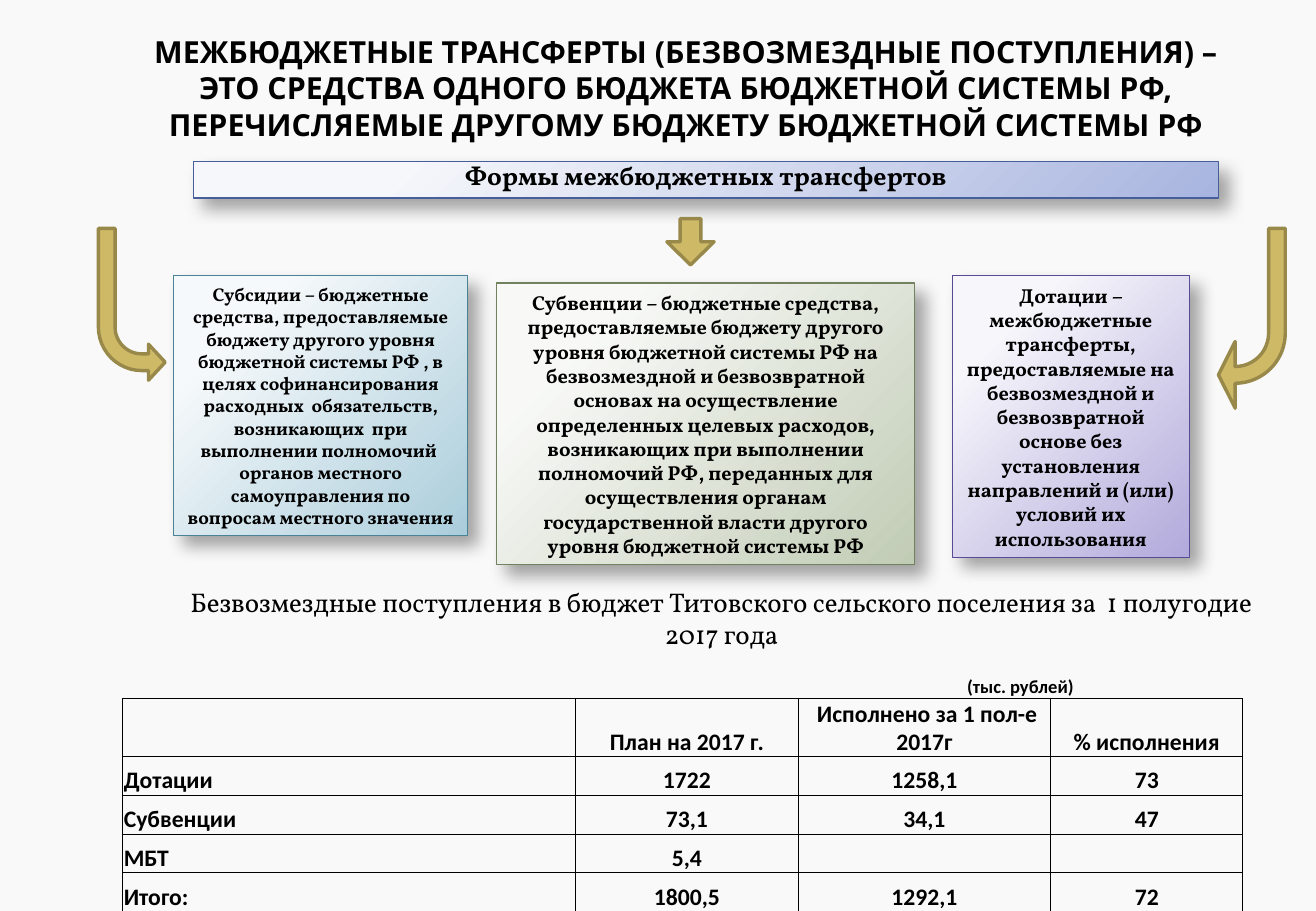
"""Build the slide on inter-budget transfers and their half-year execution."""
from pptx import Presentation
from pptx.dml.color import RGBColor
from pptx.enum.shapes import MSO_SHAPE
from pptx.enum.text import MSO_ANCHOR, MSO_AUTO_SIZE, PP_ALIGN
from pptx.oxml import parse_xml
from pptx.oxml.ns import nsdecls
from pptx.util import Pt


def color(hex_value):
    return RGBColor.from_string(hex_value)


def write_text(frame, text, size, font="Vollkorn", bold=True, align=PP_ALIGN.CENTER, anchor=MSO_ANCHOR.MIDDLE):
    frame.word_wrap = True
    frame.vertical_anchor = anchor
    paragraph = frame.paragraphs[0]
    paragraph.alignment = align
    run = paragraph.add_run()
    run.text = text
    run.font.size = Pt(size)
    run.font.name = font
    run.font.bold = bold
    run.font.color.rgb = color("000000")


presentation = Presentation()
presentation.slide_width = Pt(780)
presentation.slide_height = Pt(540)
slide = presentation.slides.add_slide(presentation.slide_layouts[0])
slide.background.fill.solid()
slide.background.fill.fore_color.rgb = color("F9F9F9")

title = slide.shapes.title
title.left, title.top, title.width, title.height = Pt(75), Pt(9.4), Pt(663), Pt(75)
title_frame = title.text_frame
title_frame.auto_size = MSO_AUTO_SIZE.NONE
title_frame.margin_left = title_frame.margin_right = Pt(3.6)
title_frame.margin_top = title_frame.margin_bottom = Pt(0)
write_text(
    title_frame,
    "МЕЖБЮДЖЕТНЫЕ ТРАНСФЕРТЫ (БЕЗВОЗМЕЗДНЫЕ ПОСТУПЛЕНИЯ) – ЭТО СРЕДСТВА ОДНОГО БЮДЖЕТА "
    "БЮДЖЕТНОЙ СИСТЕМЫ РФ, ПЕРЕЧИСЛЯЕМЫЕ ДРУГОМУ БЮДЖЕТУ БЮДЖЕТНОЙ СИСТЕМЫ РФ",
    18, font="Noto Sans", anchor=MSO_ANCHOR.BOTTOM,
)

arrows = [
    (MSO_SHAPE.DOWN_ARROW, (395.3, 129.6, 28, 27.4), (0.44, 0.5), {}),
    (MSO_SHAPE.BENT_ARROW, (58.3, 135.4, 39.6, 90), (0.25, 0.27, 0.25, 0.65), {"flipV": "1"}),
    (MSO_SHAPE.BENT_ARROW, (722.2, 135.4, 39.6, 106.6), (0.25, 0.5, 0.25, 0.75), {"flipH": "1", "flipV": "1"}),
]
for kind, bounds, adjustments, flips in arrows:
    arrow = slide.shapes.add_shape(kind, *map(Pt, bounds))
    for index, value in enumerate(adjustments):
        arrow.adjustments[index] = value
    for name, value in flips.items():
        arrow.element.spPr.xfrm.set(name, value)
    arrow.shadow.inherit = False
    arrow.fill.solid()
    arrow.fill.fore_color.rgb = color("CEB966")
    arrow.line.color.rgb = color("98894B")
    arrow.line.width = Pt(2)

panels = [
    ((114.5, 95.8, 607.7, 21.6), ("F6F7FB", "A8B5DF", "465F9A"), 15.3, MSO_ANCHOR.TOP,
     "Формы межбюджетных трансфертов"),
    ((103, 163.4, 174.2, 154), ("F6F9FB", "AACDDB", "4A8296"), 11, MSO_ANCHOR.MIDDLE,
     "Субсидии – бюджетные средства, предоставляемые бюджету другого уровня бюджетной системы РФ , "
     "в целях софинансирования расходных  обязательств, возникающих  при выполнении полномочий  "
     "органов местного самоуправления по вопросам местного значения"),
    ((564.5, 163.4, 140.4, 167), ("F7F6FB", "B2AADB", "5A4A96"), 12, MSO_ANCHOR.MIDDLE,
     "Дотации – межбюджетные трансферты, предоставляемые на безвозмездной и безвозвратной основе "
     "без установления направлений и (или) условий их использования"),
    ((294.5, 167.8, 247.7, 167), ("F8F9F7", "C1CCB5", "72825E"), 12, MSO_ANCHOR.MIDDLE,
     "Субвенции – бюджетные средства, предоставляемые бюджету другого уровня бюджетной системы РФ "
     "на безвозмездной и безвозвратной основах на осуществление определенных целевых расходов, "
     "возникающих при выполнении полномочий РФ, переданных для осуществления органам "
     "государственной власти другого уровня бюджетной системы РФ"),
]
banner = slide.placeholders[1]
cards = [slide.shapes.add_shape(MSO_SHAPE.RECTANGLE, *map(Pt, panel[0])) for panel in panels[1:]]
for shape, (bounds, (light, dark, outline), size, anchor, text) in zip([banner, *cards], panels):
    shape.left, shape.top, shape.width, shape.height = map(Pt, bounds)
    shape.line.color.rgb = color(outline)
    shape.line.width = Pt(0.75)
    shape.fill.background()
    properties = shape.element.spPr
    gradient = parse_xml(
        f'<a:gradFill {nsdecls("a")} rotWithShape="1"><a:gsLst>'
        f'<a:gs pos="20000"><a:srgbClr val="{light}"/></a:gs>'
        f'<a:gs pos="100000"><a:srgbClr val="{dark}"/></a:gs></a:gsLst>'
        '<a:path path="circle"><a:fillToRect l="-15000" t="-15000" r="115000" b="115000"/></a:path>'
        '</a:gradFill>'
    )
    properties.replace(properties.find("{*}noFill"), gradient)
    shape.shadow.inherit = False
    properties.find("{*}effectLst").append(parse_xml(
        f'<a:outerShdw {nsdecls("a")} blurRad="{Pt(10.2)}" dist="{Pt(8)}" dir="2700000" algn="tl" '
        'rotWithShape="0"><a:srgbClr val="000000"><a:alpha val="35000"/></a:srgbClr></a:outerShdw>'
    ))
    shape.text_frame.auto_size = MSO_AUTO_SIZE.NONE
    write_text(shape.text_frame, text, size, anchor=anchor)
banner_paragraph = banner.text_frame.paragraphs[0]
banner_paragraph.line_spacing = 0.7
banner_paragraph.space_before = Pt(3)

caption = slide.shapes.add_textbox(Pt(104.4), Pt(343.4), Pt(646.6), Pt(46))
write_text(
    caption.text_frame,
    "Безвозмездные поступления в бюджет Титовского сельского поселения за  1 полугодие 2017 года",
    16, bold=False, anchor=MSO_ANCHOR.TOP,
)

rows = [
    ("", "", "(тыс. рублей)", ""),
    ("", "План на 2017 г.", " Исполнено за 1 пол-е 2017г", "% исполнения"),
    ("Дотации", "1722", "1258,1", "73"),
    ("Субвенции", "73,1", "34,1", "47"),
    ("МБТ", "5,4", "", ""),
    ("Итого:", "1800,5", "1292,1", "72"),
]
table_frame = slide.shapes.add_table(len(rows), 4, Pt(72.7), Pt(391), Pt(663.9), Pt(149))
table = table_frame.table
table.first_row = table.horz_banding = False
table._tbl.tblPr.find("{*}tableStyleId").text = "{2D5ABB26-0587-4C30-8999-92F81FD0307C}"
for column, width in zip(table.columns, (268.6, 131.8, 149.8, 113.7)):
    column.width = Pt(width)
for row_index, values in enumerate(rows):
    table.rows[row_index].height = Pt(34.2 if row_index == 1 else 23)
    for column_index, text in enumerate(values):
        cell = table.cell(row_index, column_index)
        cell.margin_left = cell.margin_right = cell.margin_top = Pt(0.7)
        cell.margin_bottom = Pt(0)
        cell.vertical_anchor = MSO_ANCHOR.BOTTOM
        for side in "LRTB" if row_index else "B":
            cell._tc.get_or_add_tcPr().append(parse_xml(
                f'<a:ln{side} {nsdecls("a")} w="{Pt(0.5)}"><a:solidFill><a:srgbClr val="000000"/>'
                f'</a:solidFill></a:ln{side}>'
            ))
        cell.fill.background()
        if text:
            write_text(
                cell.text_frame, text, 14 if row_index else 11, font="Calibri",
                align=PP_ALIGN.CENTER if column_index else PP_ALIGN.LEFT, anchor=MSO_ANCHOR.BOTTOM,
            )
table.cell(0, 2).merge(table.cell(0, 3))

presentation.save("out.pptx")
